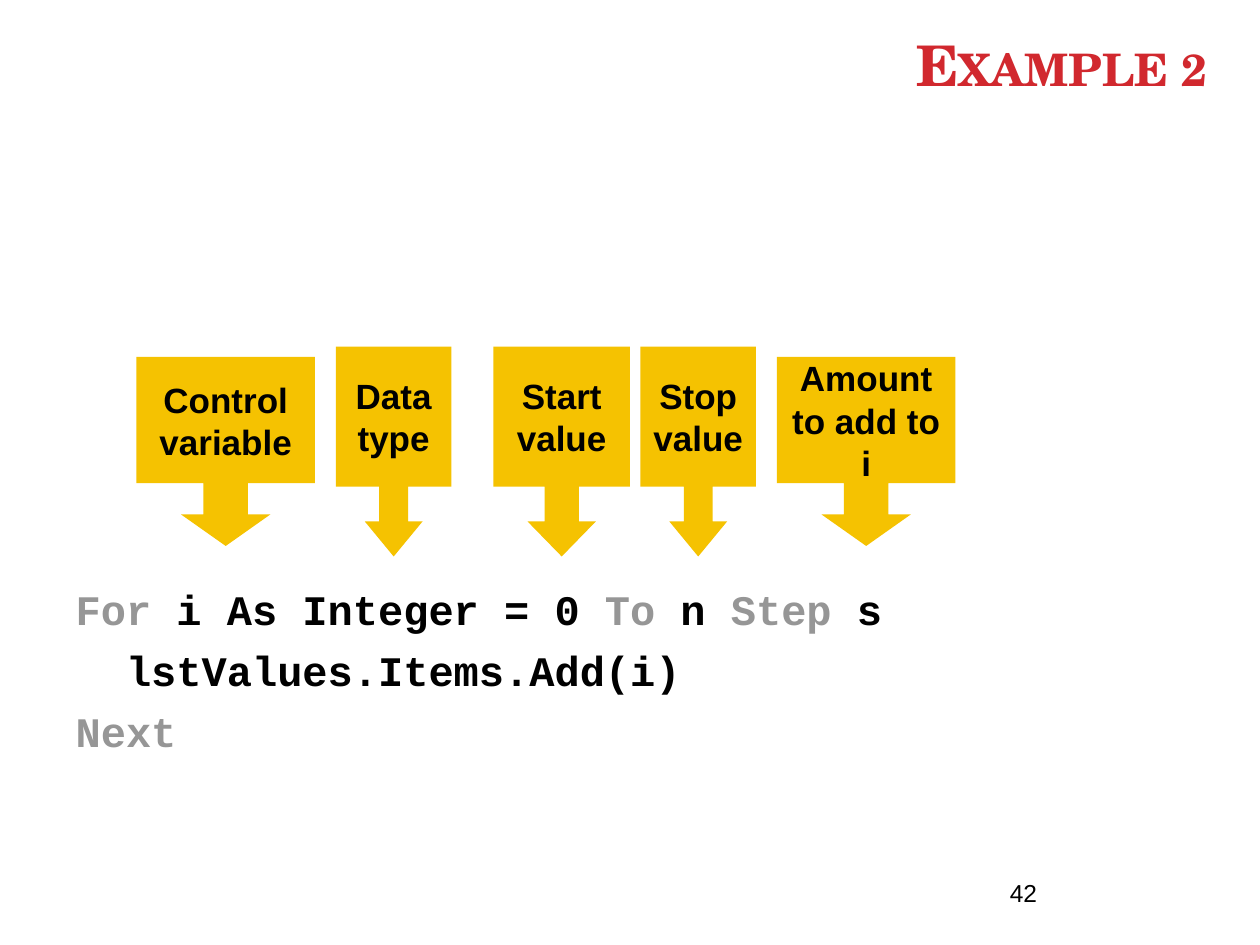
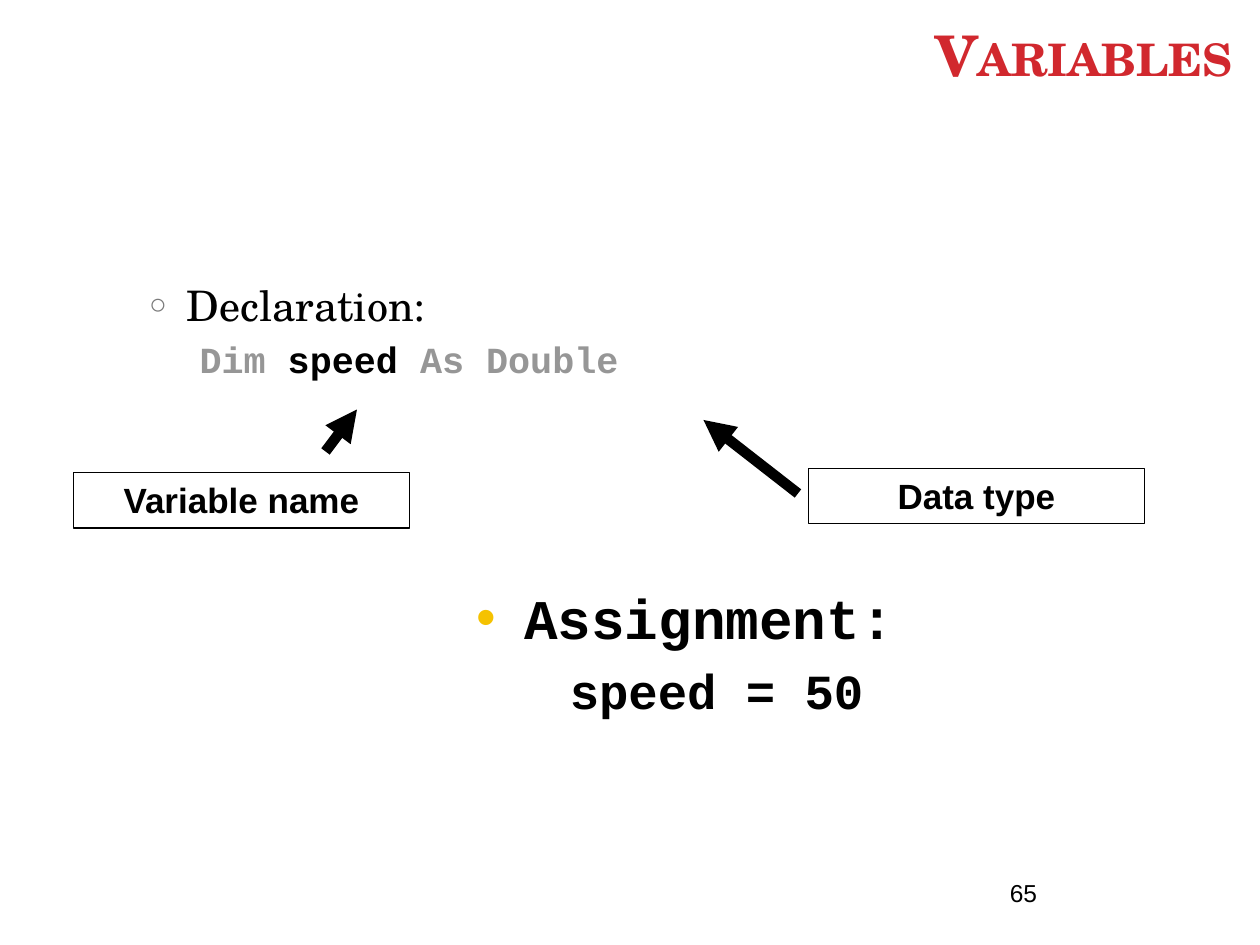
"""Build two programming lesson slides: a For loop and variable declaration."""
from dataclasses import dataclass, replace

from lxml import etree
from pptx import Presentation
from pptx.dml.color import RGBColor
from pptx.enum.shapes import MSO_CONNECTOR, MSO_SHAPE
from pptx.enum.text import MSO_ANCHOR, MSO_AUTO_SIZE, PP_ALIGN
from pptx.oxml.ns import qn
from pptx.util import Inches, Pt

LEFT, CENTER, RIGHT = PP_ALIGN.LEFT, PP_ALIGN.CENTER, PP_ALIGN.RIGHT
TOP, MIDDLE, BOTTOM = MSO_ANCHOR.TOP, MSO_ANCHOR.MIDDLE, MSO_ANCHOR.BOTTOM
NO_FIT = MSO_AUTO_SIZE.NONE
CALLOUT, RECTANGLE = MSO_SHAPE.DOWN_ARROW_CALLOUT, MSO_SHAPE.RECTANGLE
STRAIGHT = MSO_CONNECTOR.STRAIGHT
COLUMNS, ROWS = 120, 90


@dataclass(frozen=True)
class TextStyle:
    size: int
    font: str
    color: str
    bold: bool = True
    small_caps: bool = False


@dataclass(frozen=True)
class Bullet:
    char: str
    color: str
    percent: int = 100


@dataclass(frozen=True)
class Line:
    runs: tuple
    style: TextStyle
    align: PP_ALIGN = LEFT
    left: float = 0
    hang: float = 0
    before: float = 0
    level: int = 0
    bullet: Bullet = None


@dataclass(frozen=True)
class Theme:
    ink: str = "000000"
    keyword: str = "969696"
    accent: str = "F5C201"
    paper: str = "FFFFFF"
    title: TextStyle = TextStyle(32, "TeX Gyre Schola", "D1282E", small_caps=True)
    prose: TextStyle = TextStyle(24, "TeX Gyre Schola", "000000", bold=False)
    code: TextStyle = TextStyle(24, "Courier New", "000000")
    label: TextStyle = TextStyle(20, "Arial", "000000")
    number: TextStyle = TextStyle(14, "Arial", "000000", bold=False)
    ring: Bullet = Bullet("○", "7A7A7A", 70)
    dot: Bullet = Bullet("•", "F5C201")


class Deck:
    def __init__(self, theme):
        self.theme = theme
        self.prs = Presentation()
        self.prs.slide_width, self.prs.slide_height = Inches(10), Inches(7.5)
        self.slide = None

    def at(self, column, row):
        return (round(self.prs.slide_width * column / COLUMNS),
                round(self.prs.slide_height * row / ROWS))

    def box(self, column, row, width, height):
        return *self.at(column, row), *self.at(width, height)

    def new_slide(self, title, number, title_box):
        self.slide = self.prs.slides.add_slide(self.prs.slide_layouts[1])
        background = self.slide.background.fill
        background.solid()
        background.fore_color.rgb = RGBColor.from_string(self.theme.paper)
        heading = Line((title,), self.theme.title, RIGHT)
        self.placeholder(self.slide.shapes.title, title_box, [heading], BOTTOM)
        self.text_box((95, 83, 25, 6), [Line((number,), self.theme.number)])

    def body(self, box, lines):
        self.placeholder(self.slide.placeholders[1], box, lines, TOP)

    def placeholder(self, holder, box, lines, anchor):
        holder.left, holder.top, holder.width, holder.height = self.box(*box)
        self.set_lines(holder.text_frame, lines, anchor)

    def text_box(self, box, lines):
        frame = self.slide.shapes.add_textbox(*self.box(*box)).text_frame
        self.set_lines(frame, lines, TOP)

    def callout(self, box, words):
        callout = self.slide.shapes.add_shape(CALLOUT, *self.box(*box))
        callout.shadow.inherit = False
        callout.fill.solid()
        callout.fill.fore_color.rgb = RGBColor.from_string(self.theme.accent)
        callout.line.fill.background()
        head = callout.height / 6 / min(callout.width, callout.height)
        for index, value in enumerate((0.25, 0.25, head, 0.667)):
            callout.adjustments[index] = value
        lines = [Line((word,), self.theme.label, CENTER) for word in words]
        self.set_lines(callout.text_frame, lines, MIDDLE, wrap=False)

    def label(self, box, text):
        label = self.slide.shapes.add_shape(RECTANGLE, *self.box(*box))
        label.shadow.inherit = False
        label.fill.background()
        label.line.color.rgb = RGBColor.from_string(self.theme.ink)
        label.line.width = Pt(0.75)
        self.set_lines(label.text_frame, [Line((text,), self.theme.label, CENTER)], TOP)

    def arrow(self, start, end):
        arrow = self.slide.shapes.add_connector(STRAIGHT, *self.at(*start), *self.at(*end))
        arrow.line.color.rgb = RGBColor.from_string(self.theme.ink)
        arrow.line.width = Pt(6)
        properties = arrow._element.spPr
        etree.SubElement(properties.find(qn("a:ln")), qn("a:tailEnd"), type="triangle")
        etree.SubElement(properties, qn("a:effectLst"))

    def set_lines(self, frame, lines, anchor, wrap=True):
        frame.auto_size, frame.word_wrap = NO_FIT, wrap
        frame.vertical_anchor = anchor
        for index, line in enumerate(lines):
            paragraph = frame.add_paragraph() if index else frame.paragraphs[0]
            self.layout_line(paragraph, line)
            self.apply(paragraph.font, line.style)
            for part in line.runs:
                text, color = part if isinstance(part, tuple) else (part, line.style.color)
                run = paragraph.add_run()
                run.text = text
                self.apply(run.font, replace(line.style, color=color))

    def layout_line(self, paragraph, line):
        paragraph.alignment, paragraph.level = line.align, line.level
        paragraph.space_before = Pt(line.before)
        properties = paragraph._p.get_or_add_pPr()
        properties.set("marL", str(Inches(line.left)))
        properties.set("indent", str(Inches(-line.hang)))
        if line.bullet is None:
            etree.SubElement(properties, qn("a:buNone"))
            return
        color = etree.SubElement(properties, qn("a:buClr"))
        etree.SubElement(color, qn("a:srgbClr"), val=line.bullet.color)
        etree.SubElement(properties, qn("a:buSzPct"), val=str(line.bullet.percent * 1000))
        etree.SubElement(properties, qn("a:buFont"), typeface="Arial")
        etree.SubElement(properties, qn("a:buChar"), char=line.bullet.char)

    def apply(self, font, style):
        font.name, font.size, font.bold = style.font, Pt(style.size), style.bold
        font.color.rgb = RGBColor.from_string(style.color)
        if style.small_caps:
            font._element.set("cap", "small")


def loop_slide(deck):
    theme = deck.theme
    deck.new_slide("Example 2", "42", (14, 4, 102.2, 5.9))
    loop = (("For", theme.keyword), " i As Integer = 0 ", ("To", theme.keyword),
            " n ", ("Step", theme.keyword), " s")
    code = [(loop, 0.3), (("lstValues.Items.Add(i)",), 0.7),
            ((("Next", theme.keyword),), 0.3)]
    deck.body((6, 55, 109, 24), [Line(runs, theme.code, left=left, hang=0.3, before=6)
                                 for runs, left in code])
    wide, tall = (34, 18), (33, 20)
    callouts = [
        (13, 17, wide, ("Control", "variable")),
        (32, 11, tall, ("Data", "type")),
        (47, 13, tall, ("Start", "value")),
        (61, 11, tall, ("Stop", "value")),
        (74, 17, wide, ("Amount", "to add to", "i")),
    ]
    for column, width, (row, height), words in callouts:
        deck.callout((column, row, width, height), words)


def variables_slide(deck):
    theme = deck.theme
    deck.new_slide("Variables", "65", (2, 1.7, 116.6, 7.3))
    declaration = (("Dim", theme.keyword), " speed ", ("As Double", theme.keyword))
    deck.body((13, 26, 104.5, 25), [
        Line(("Declaration:",), theme.prose, left=0.3, hang=0.3, before=6,
             bullet=theme.ring),
        Line(declaration, replace(theme.code, size=21), left=0.7, hang=0.3,
             before=4.2, level=1),
    ])
    deck.label((7, 45, 32, 5.3), "Variable name")
    deck.label((77, 44.6, 32, 5.3), "Data type")
    deck.arrow((31, 43), (34, 39))
    deck.arrow((76, 47), (67, 40))
    deck.text_box((13, 55, 104.5, 15), [
        Line(("Assignment:",), replace(theme.code, size=32), CENTER, 0.38, 0.38,
             6.4, bullet=theme.dot),
        Line(("speed = 50",), replace(theme.code, size=28), CENTER, 0.81, 0.31,
             5.6, level=1),
    ])


def main():
    deck = Deck(Theme())
    loop_slide(deck)
    variables_slide(deck)
    deck.prs.save("out.pptx")


if __name__ == "__main__":
    main()
